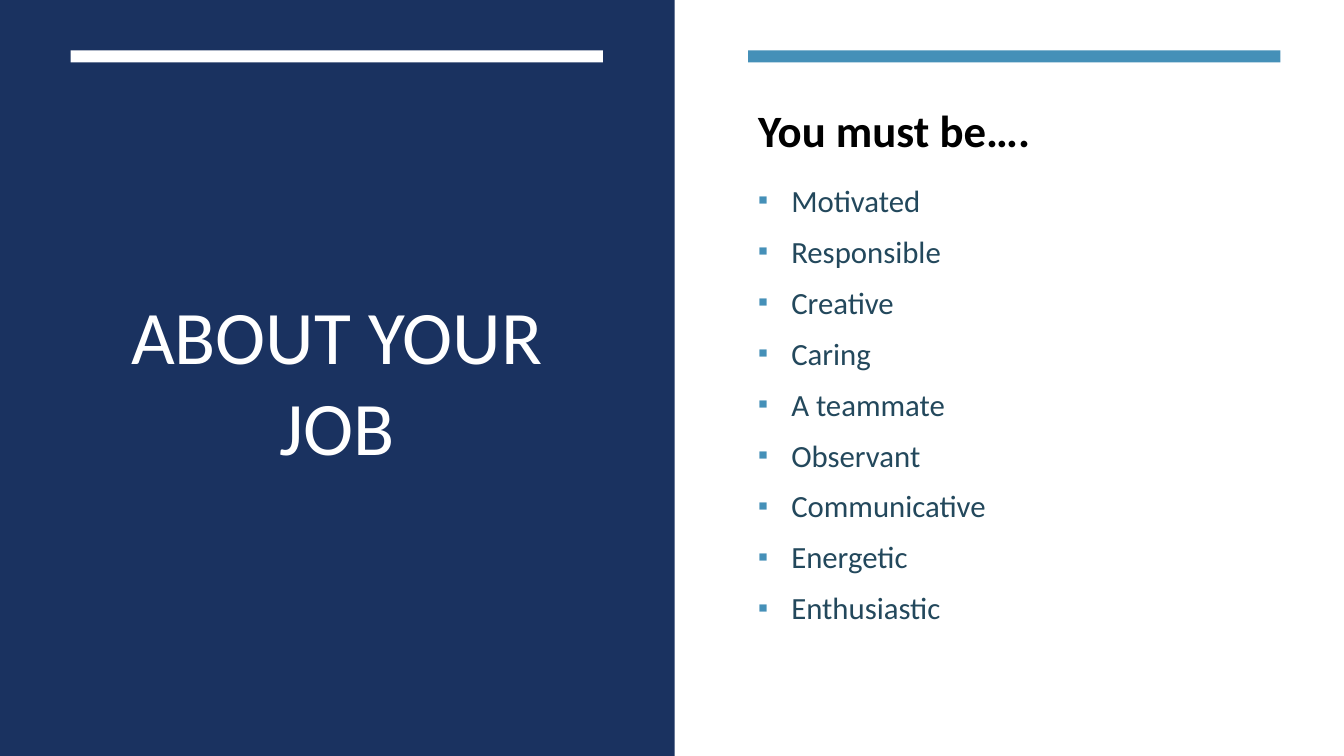
import pptx
import pptx.dml.color
import pptx.enum.shapes
import pptx.enum.text
import pptx.oxml
import pptx.oxml.ns
import pptx.util

PX = 9144  # 100 px to the inch
NAVY, BLUE, SLATE, WHITE, BLACK = "1A3260", "4590B8", "23485C", "FFFFFF", "000000"
TRAITS = ["Motivated", "Responsible", "Creative", "Caring", "A teammate",
          "Observant", "Communicative", "Energetic", "Enthusiastic"]


def color(code):
    return pptx.dml.color.RGBColor.from_string(code)


def apply(item, style):
    for name, value in style.items():
        setattr(item, name, value)


class Deck:
    font = "Calibri"

    def __init__(self, wide, high):
        self.show = pptx.Presentation()
        self.show.slide_width, self.show.slide_height = wide * PX, high * PX
        self.slide = self.show.slides.add_slide(self.show.slide_layouts[6])

    def rect(self, box, fill):
        kind = pptx.enum.shapes.MSO_SHAPE.RECTANGLE
        shape = self.slide.shapes.add_shape(kind, *[n * PX for n in box])
        shape.shadow.inherit = False
        shape.fill.solid()
        shape.fill.fore_color.rgb = color(fill)
        shape.line.fill.background()

    def text(self, box, lines, size, ink, bold=False, frame=None, para=None, mark=None):
        area = self.slide.shapes.add_textbox(*[n * PX for n in box]).text_frame
        apply(area, {"word_wrap": True, **(frame or {})})
        for i, line in enumerate(lines):
            par = area.add_paragraph() if i else area.paragraphs[0]
            apply(par, para or {})
            run = par.add_run()
            run.text = line
            apply(run.font, {"name": self.font, "size": pptx.util.Pt(size), "bold": bold})
            run.font.color.rgb = color(ink)
            if mark:
                self.bullet(par, mark)

    def bullet(self, par, mark, hang=33):
        props = par._p.get_or_add_pPr()
        props.set("marL", str(hang * PX))
        props.set("indent", str(-hang * PX))
        space = pptx.oxml.ns.nsdecls("a")
        for xml in (f'<a:buClr {space}><a:srgbClr val="{mark}"/></a:buClr>',
                    f'<a:buSzPct {space} val="92000"/>',
                    f'<a:buFont {space} typeface="{self.font}"/>',
                    f'<a:buChar {space} char="▪"/>'):
            props.append(pptx.oxml.parse_xml(xml))


def main():
    deck = Deck(1333, 750)
    anchor = pptx.enum.text.MSO_ANCHOR

    # Left panel with the title
    deck.rect((0, 0, 669, 750), NAVY)
    deck.text((70, 113, 528, 528), ["ABOUT YOUR JOB"], 54, WHITE,
              frame={"vertical_anchor": anchor.MIDDLE},
              para={"alignment": pptx.enum.text.PP_ALIGN.CENTER})

    # Bars over both halves
    for left, fill in ((70, WHITE), (742, BLUE)):
        deck.rect((left, 50, 528, 12), fill)

    # Right half: list of traits and its heading
    deck.text((742, 162, 531, 518), TRAITS, 22, SLATE, mark=BLUE,
              frame={"vertical_anchor": anchor.TOP, "margin_top": 18 * PX},
              para={"space_before": pptx.util.Pt(4), "space_after": pptx.util.Pt(6)})
    deck.text((742, 97, 542, 64), ["You must be…."], 32, BLACK, bold=True)

    deck.show.save("out.pptx")


if __name__ == "__main__":
    main()
